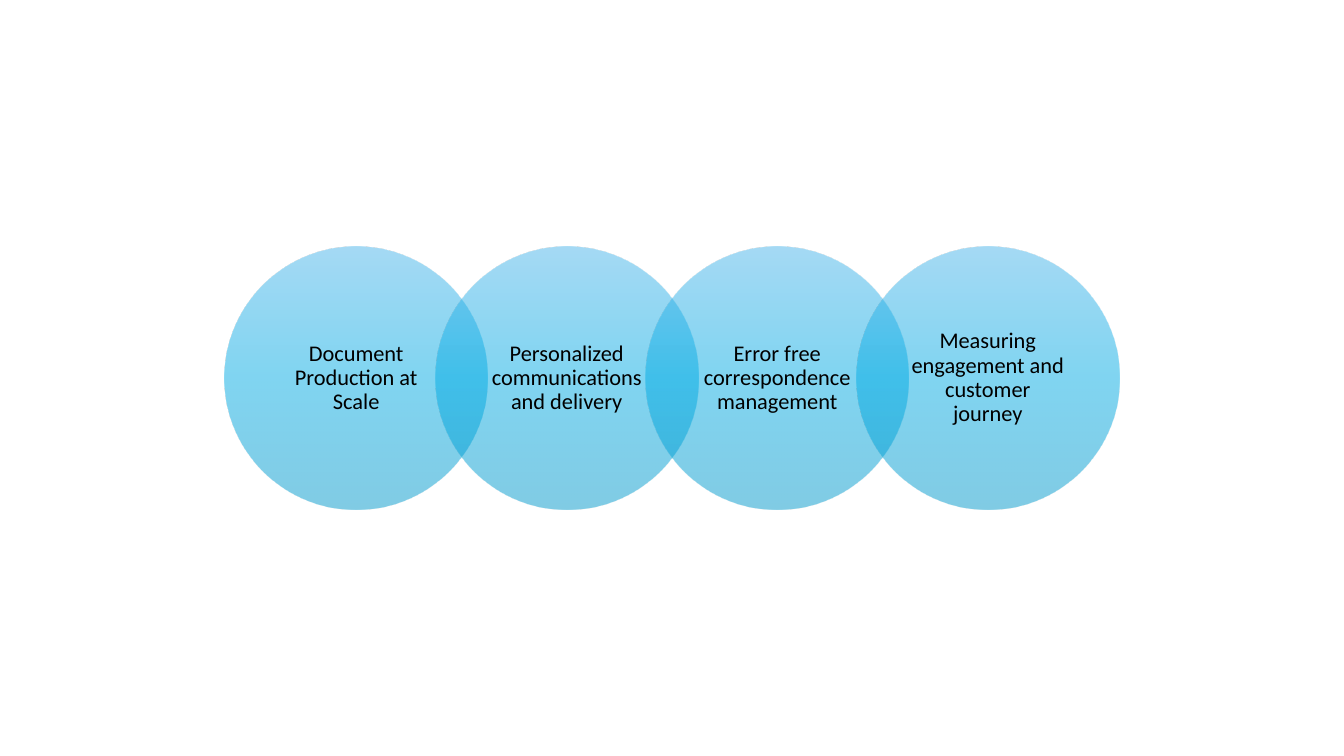
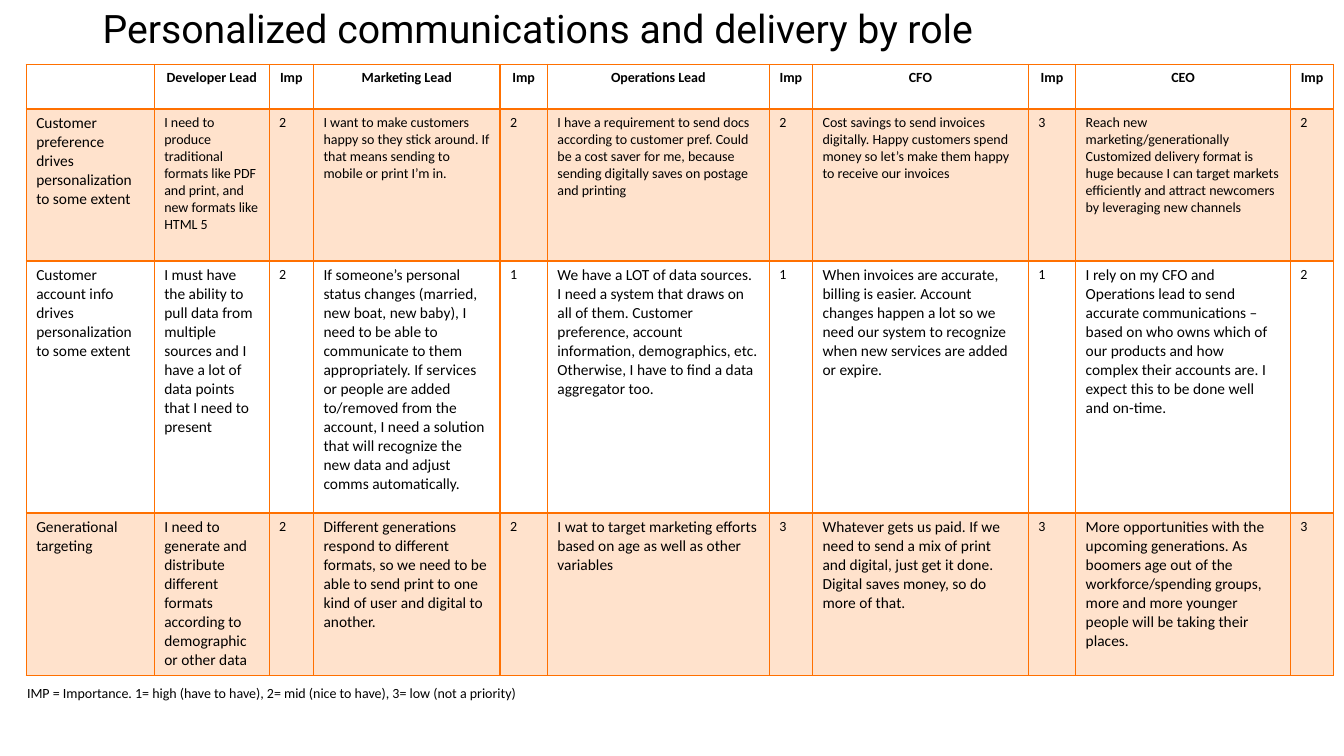
import pptx
import pptx.dml.color
import pptx.enum.shapes
import pptx.enum.text
import pptx.oxml
import pptx.oxml.ns
import pptx.util

Inches = pptx.util.Inches
Pt = pptx.util.Pt
ALIGN = pptx.enum.text.PP_ALIGN
ANCHOR = pptx.enum.text.MSO_ANCHOR

SLIDE_W, SLIDE_H = 13.33, 7.5
BODY_FONT, TITLE_FONT = "Calibri", "Roboto"
BLACK, ORANGE = "000000", "FF7000"
CIRCLE_STOPS = [(0, "4BB6EB"), (50, "00ACE5"), (100, "0099CB")]
CIRCLE_OPACITY, BAND_OPACITY = 50, 20

THEMES = [
    "Document Production at Scale",
    "Personalized communications and delivery",
    "Error free correspondence management",
    "Measuring engagement and customer journey",
]

TITLE = "Personalized communications and delivery by role"
LEGEND = "IMP = Importance. 1= high (have to have), 2= mid (nice to have), 3= low (not a priority)"
ROLES = ["Developer Lead", "Marketing Lead", "Operations Lead", "CFO", "CEO"]
# Each need: topic, text size, then (statement, importance) for every role
NEEDS = [
    ("Customer preference drives personalization to some extent", 10, [
        ("I need to produce traditional formats like PDF and print, and new formats like HTML 5", 2),
        ("I want to make customers happy so they stick around. If that means sending to mobile "
         "or print I’m in.", 2),
        ("I have a requirement to send docs according to customer pref. Could be a cost saver for me, "
         "because sending digitally saves on postage and printing", 2),
        ("Cost savings to send invoices digitally. Happy customers spend money so let’s make them "
         "happy to receive our invoices", 3),
        ("Reach new marketing/generationally\vCustomized delivery format is huge because I can target "
         "markets efficiently and attract newcomers by leveraging new channels", 2),
    ]),
    ("Customer account info drives personalization to some extent", 11, [
        ("I must have the ability to pull data from multiple sources and I have a lot of data points "
         "that I need to present", 2),
        ("If someone’s personal status changes (married, new boat, new baby), I need to be able to "
         "communicate to them appropriately. If services or people are added to/removed from the "
         "account, I need a solution that will recognize the new data and adjust comms "
         "automatically.", 1),
        ("We have a LOT of data sources. I need a system that draws on all of them. Customer "
         "preference, account information, demographics, etc. Otherwise, I have to find a data "
         "aggregator too.", 1),
        ("When invoices are accurate, billing is easier. Account changes happen a lot so we need our "
         "system to recognize when new services are added or expire.", 1),
        ("I rely on my CFO and Operations lead to send accurate communications – based on who owns "
         "which of our products and how complex their accounts are. I expect this to be done well "
         "and on-time.", 2),
    ]),
    ("Generational targeting", 11, [
        ("I need to generate and distribute different formats according to demographic or other data", 2),
        ("Different generations respond to different formats, so we need to be able to send print to "
         "one kind of user and digital to another.", 2),
        ("I wat to target marketing efforts based on age as well as other variables", 3),
        ("Whatever gets us paid. If we need to send a mix of print and digital, just get it done. "
         "Digital saves money, so do more of that.", 3),
        ("More opportunities with the upcoming generations. As boomers age out of the "
         "workforce/spending groups, more and more younger people will be taking their places.", 3),
    ]),
]
COLUMN_WIDTHS = [1.27, 1.14, 0.44, 1.85, 0.47, 2.2, 0.43, 2.14, 0.47, 2.13, 0.43]
ROW_HEIGHTS = [0.44, 1.51, 2.5, 1.51]


def rgb(value):
    return pptx.dml.color.RGBColor.from_string(value)


def add_xml(parent, xml):
    """Append an element, declaring its namespace before its first attribute."""
    parent.append(pptx.oxml.parse_xml(xml.replace(" ", f" {pptx.oxml.ns.nsdecls('a')} ", 1)))


def write(frame, text, size, font=BODY_FONT, bold=False, align=ALIGN.LEFT, spacing=None):
    frame.word_wrap = True
    frame.text = text
    paragraph = frame.paragraphs[0]
    paragraph.alignment = align
    if spacing:
        paragraph.line_spacing = spacing
    paragraph.font.name = font
    paragraph.font.size = Pt(size)
    paragraph.font.bold = bold
    paragraph.font.color.rgb = rgb(BLACK)


def add_text(slide, box, text, size, anchor=ANCHOR.TOP, **style):
    frame = slide.shapes.add_textbox(*map(Inches, box)).text_frame
    write(frame, text, size, **style)
    frame.vertical_anchor = anchor


def fill_circle(circle):
    """Give the circle its translucent top-to-bottom gradient."""
    circle.fill.gradient()
    circle.fill.gradient_angle = 270
    stops = circle._element.spPr.find(pptx.oxml.ns.qn("a:gradFill")).find(pptx.oxml.ns.qn("a:gsLst"))
    for stop in list(stops):
        stops.remove(stop)
    for position, colour in CIRCLE_STOPS:
        add_xml(stops, f'<a:gs pos="{position * 1000}"><a:srgbClr val="{colour}">'
                       f'<a:alpha val="{CIRCLE_OPACITY * 1000}"/></a:srgbClr></a:gs>')


def style_cell(cell, row):
    """Draw the borders, with a heavy line under the header, and shade every other row."""
    properties = cell._tc.get_or_add_tcPr()
    weights = {"L": 1, "R": 1, "T": 2 if row == 1 else 1, "B": 2 if row == 0 else 1}
    for side, weight in weights.items():
        add_xml(properties, f'<a:ln{side} w="{Pt(weight)}"><a:solidFill>'
                            f'<a:srgbClr val="{ORANGE}"/></a:solidFill></a:ln{side}>')
    if row % 2:
        cell.fill.solid()
        cell.fill.fore_color.rgb = rgb(ORANGE)
        colour = properties.find(pptx.oxml.ns.qn("a:solidFill"))[0]
        add_xml(colour, f'<a:alpha val="{BAND_OPACITY * 1000}"/>')
    else:
        cell.fill.background()


def build_themes(slide):
    diameter = 2.61
    step = diameter * 0.8
    left = (SLIDE_W - diameter - step * (len(THEMES) - 1)) / 2
    top = (SLIDE_H - diameter) / 2
    for index, theme in enumerate(THEMES):
        circle = slide.shapes.add_shape(
            pptx.enum.shapes.MSO_SHAPE.OVAL, Inches(left + index * step), Inches(top),
            Inches(diameter), Inches(diameter))
        circle.shadow.inherit = False
        circle.line.fill.background()
        fill_circle(circle)
        frame = circle.text_frame
        frame.margin_left = frame.margin_right = Inches(0.14)
        frame.margin_top = frame.margin_bottom = Inches(0.02)
        frame.vertical_anchor = ANCHOR.MIDDLE
        write(frame, theme, 16, align=ALIGN.CENTER, spacing=0.9)


def build_roles(slide):
    table = slide.shapes.add_table(
        len(ROW_HEIGHTS), len(COLUMN_WIDTHS), Inches(0.26), Inches(0.64),
        Inches(sum(COLUMN_WIDTHS)), Inches(sum(ROW_HEIGHTS))).table
    table.first_row = table.horz_banding = False
    for column, width in zip(table.columns, COLUMN_WIDTHS):
        column.width = Inches(width)
    for row, height in zip(table.rows, ROW_HEIGHTS):
        row.height = Inches(height)

    rows = [[("", 10)] + [(label, 10) for role in ROLES for label in (role, "Imp")]]
    for topic, size, answers in NEEDS:
        rows.append([(topic, 11)] + [
            entry for statement, importance in answers
            for entry in ((statement, size), (str(importance), 10))])
    for r, entries in enumerate(rows):
        header = r == 0
        for c, (text, size) in enumerate(entries):
            cell = table.cell(r, c)
            write(cell.text_frame, text, size, bold=header,
                  align=ALIGN.CENTER if header else ALIGN.LEFT)
            style_cell(cell, r)

    add_text(slide, (0.92, -0.03, 11.5, 0.67), TITLE, 28, ANCHOR.MIDDLE,
             font=TITLE_FONT, spacing=0.9)
    add_text(slide, (0.17, 6.74, 5.56, 0.27), LEGEND, 10)


def main():
    deck = pptx.Presentation()
    deck.slide_width, deck.slide_height = Inches(SLIDE_W), Inches(SLIDE_H)
    for build in (build_themes, build_roles):
        build(deck.slides.add_slide(deck.slide_layouts[6]))
    deck.save("out.pptx")


if __name__ == "__main__":
    main()
